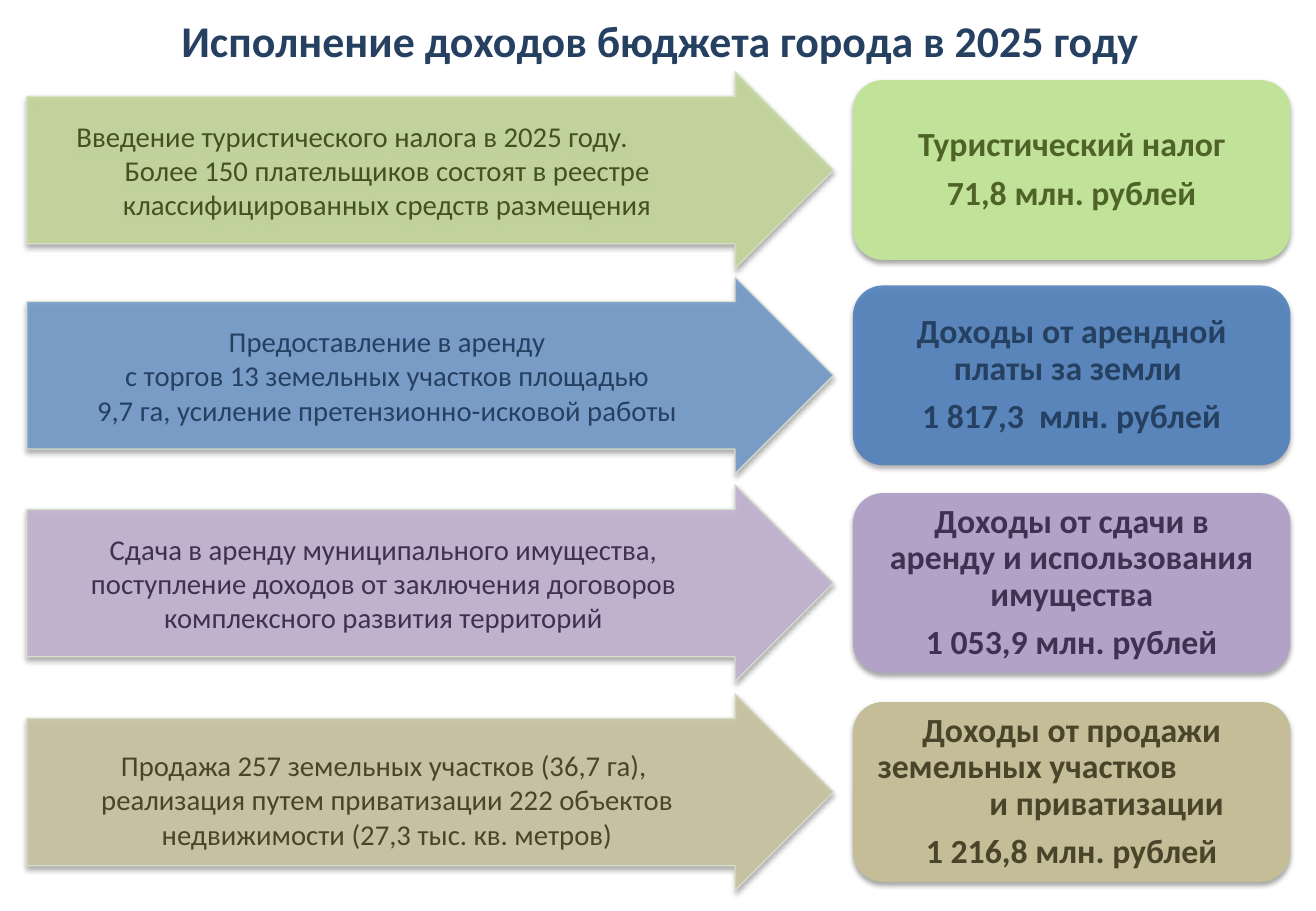
from lxml import etree
from pptx import Presentation, util as u
from pptx.dml.color import RGBColor
from pptx.enum import shapes, text
from pptx.oxml import ns

PX = 9144
HEX = {
    "title": "254061", "edge": "D9E2CC", "shade": "000000",
    "tax": "C3D69B", "tax box": "C0E399", "tax note": "425222", "tax sum": "4F6228",
    "rent": "749BCA", "rent box": "5081BC", "rent note": "254061", "rent sum": "254061",
    "lease": "C2B3D1", "lease box": "B3A2C7", "lease note": "403152", "lease sum": "403152",
    "sale": "CAC4A2", "sale box": "C4BD97", "sale note": "4A452A", "sale sum": "4A452A",
}
ROWS = [
    dict(key="tax", top=59,
         note=[("Введение туристического налога в 2025 году.", 13),
               ("Более 150 плательщиков состоят в реестре классифицированных средств размещения", 0)],
         head=[("Туристический налог", 0)], total="71,8 млн. рублей"),
    dict(key="rent", top=228, solid=90,
         note=[("Предоставление в аренду", 0),
               ("с торгов 13 земельных участков площадью", 0),
               ("9,7 га, усиление претензионно-исковой работы", 0)],
         head=[("Доходы от арендной платы за земли ", 0)], total="1 817,3  млн. рублей"),
    dict(key="lease", top=399, right=-3,
         note=[("Сдача в аренду муниципального имущества, поступление доходов "
                "от заключения договоров комплексного развития территорий", 0)],
         head=[("Доходы от сдачи в аренду и использования имущества", 0)],
         total="1 053,9 млн. рублей"),
    dict(key="sale", top=571, down=6, pad=8,
         note=[("Продажа 257 земельных участков (36,7 га), ", 0),
               ("реализация путем приватизации 222 объектов недвижимости (27,3 тыс. кв. метров)", 0)],
         head=[("Доходы от продажи", 0), ("земельных участков", 5), ("и приватизации", 97)],
         total="1 216,8 млн. рублей"),
]


def px(*vals):
    """Turn px lengths into EMU."""
    return [v * PX for v in vals]


def rgb(name):
    """Look up a colour by name."""
    return RGBColor.from_string(HEX[name])


def style(font, size, color, bold):
    """Format a font."""
    font.name, font.size, font.bold = "Calibri", u.Pt(size), bold
    font.color.rgb = rgb(color)


def fade(part, solid):
    """Set the opacity of the colours of a shape in percent."""
    for clr in part._element.spPr.iter(ns.qn("a:srgbClr")):
        etree.SubElement(clr, ns.qn("a:alpha"), val=str(solid * 1000))


def shade(part):
    """Give a shape a soft shadow below it."""
    part.shadow.inherit = False
    fx = part._element.spPr.find(ns.qn("a:effectLst"))
    drop = etree.SubElement(fx, ns.qn("a:outerShdw"), blurRad="39370", dist="22860",
                            dir="5400000", rotWithShape="0")
    clr = etree.SubElement(drop, ns.qn("a:srgbClr"), val=HEX["shade"])
    etree.SubElement(clr, ns.qn("a:alpha"), val="35000")


def write(part, lines, pads, size, color, bold):
    """Fill a shape with lines, centred or set in from the left."""
    frame = part.text_frame
    frame.word_wrap = True
    frame.vertical_anchor = text.MSO_ANCHOR.MIDDLE
    (frame.margin_left, frame.margin_top,
     frame.margin_right, frame.margin_bottom) = px(*pads)
    frame.text = "\n".join(line for line, _ in lines)
    for para, (_, left) in zip(frame.paragraphs, lines):
        para.alignment = text.PP_ALIGN.LEFT if left else text.PP_ALIGN.CENTER
        if left:
            para._p.get_or_add_pPr().set("marL", str(left * PX))
        style(para.runs[0].font, size, color, bold)
    return frame.paragraphs


def arrow(slide, box, row):
    """Draw the arrow with the measures taken."""
    key, right, down = row["key"], row.get("right", 0), row.get("down", 0)
    part = slide.shapes.add_shape(shapes.MSO_SHAPE.RIGHT_ARROW, *px(*box))
    part.adjustments[0], part.adjustments[1] = 0.75, 0.5
    part.fill.solid()
    part.fill.fore_color.rgb = rgb(key)
    part.line.color.rgb = rgb("edge")
    part.line.width = u.Pt(0.75)
    fade(part, 90)
    shade(part)
    write(part, row["note"], (28 + right, 2 * down, 38 - right, 0), 17, key + " note", False)


def result(slide, box, row):
    """Draw the rounded box with the income and its sum."""
    key, pad = row["key"], row.get("pad", 18)
    part = slide.shapes.add_shape(shapes.MSO_SHAPE.ROUNDED_RECTANGLE, *px(*box))
    part.fill.solid()
    part.fill.fore_color.rgb = rgb(key + " box")
    part.line.fill.background()
    if "solid" in row:
        fade(part, row["solid"])
    shade(part)
    lines = row["head"] + [(row["total"], 0)]
    paras = write(part, lines, (pad, 0, pad, 0), 20, key + " sum", True)
    for para in paras:
        para.line_spacing = 0.9
    paras[-2].space_after = u.Pt(7)


def band(slide, box, row):
    """Place an arrow and its result side by side."""
    x, y, w, h = box
    arrow(slide, (x, y, 664, h), row)
    result(slide, (x + w - 360, y + 7, 360, h - 14), row)


def head(slide, box):
    """Place the slide title."""
    part = slide.shapes.title
    part.left, part.top, part.width, part.height = px(*box)
    write(part, [("Исполнение доходов бюджета города в 2025 году", 0)],
          (10, 5, 10, 5), 26, "title", True)


def main():
    """Build the slide and save it."""
    deck = Presentation()
    deck.slide_width, deck.slide_height = px(1083, 750)
    slide = deck.slides.add_slide(deck.slide_layouts[5])
    head(slide, (2, 6, 1083, 54))
    for row in ROWS:
        band(slide, (22, row["top"], 1040, 162), row)
    deck.save("out.pptx")


if __name__ == "__main__":
    main()
